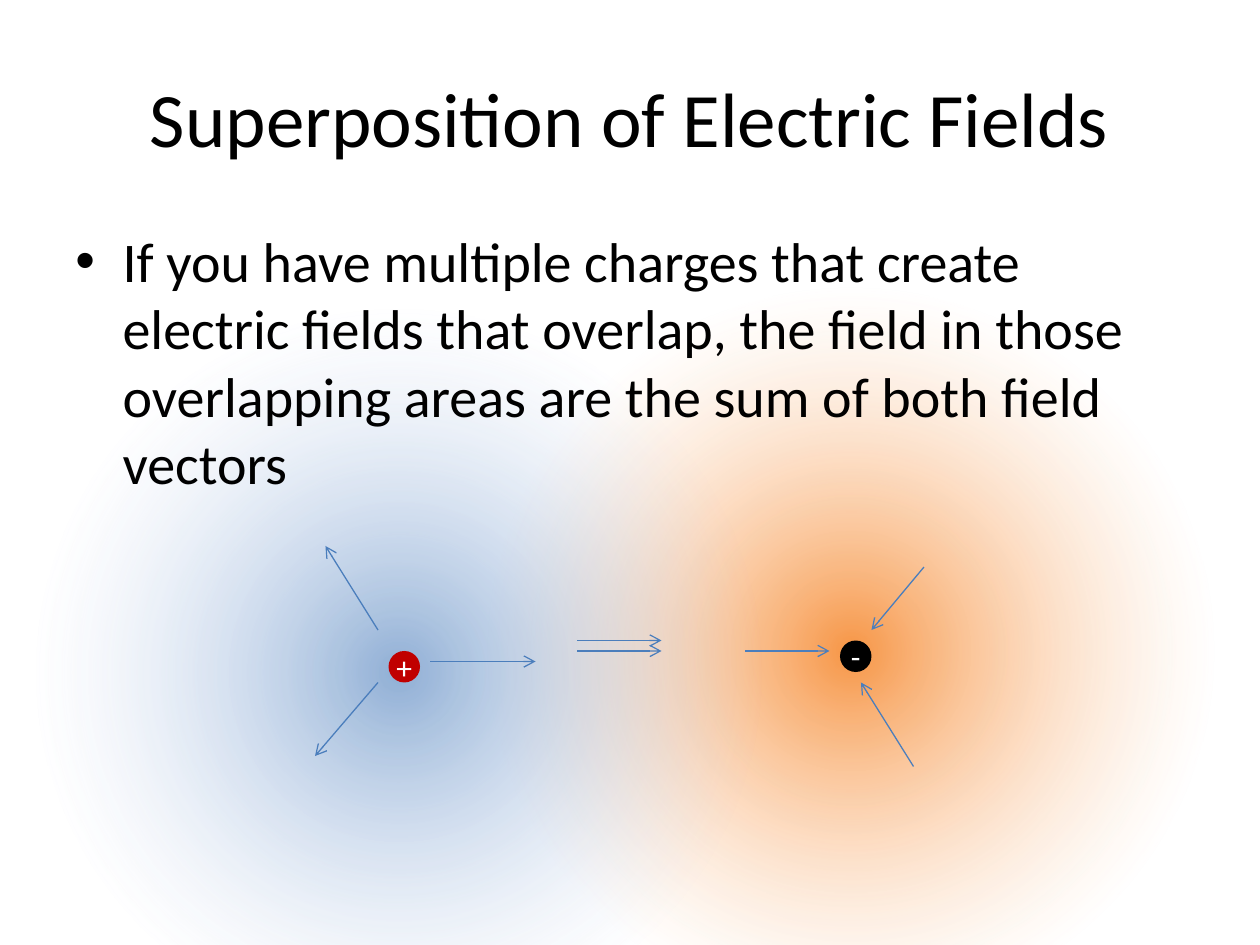
from lxml import etree
from pptx import Presentation
from pptx import util as u
from pptx.dml.color import RGBColor
from pptx.enum import shapes, text
from pptx.oxml import ns

WHITE = RGBColor(0xFF, 0xFF, 0xFF)
BLACK = RGBColor(0, 0, 0)
RED = RGBColor(0xC0, 0, 0)
ORANGE = RGBColor(0xF7, 0x96, 0x46)
PEACH = RGBColor(0xFC, 0xD5, 0xB5)
BLUE = RGBColor(0x4F, 0x81, 0xBD)
PALE_BLUE = RGBColor(0xC2, 0xD1, 0xED)
ARROW_BLUE = RGBColor(0x4B, 0x7E, 0xBC)

COLUMNS, ROWS = 120, 90
FIELD_SIZE, CHARGE_SIZE = 70, 3

FIELDS = [
    (46, 27, [(0, ORANGE, 100), (70, PEACH, 0)]),
    (3, 29, [(0, BLUE, 63), (70, PALE_BLUE, 0)]),
]
CHARGES = [(37, 62, "+", RED), (80, 61, "-", BLACK)]
ARROWS = [
    ((36, 60), (31, 52)),
    ((41, 63), (51, 63)),
    ((71, 62), (79, 62)),
    ((55, 62), (63, 62)),
    ((55, 61), (63, 61)),
    ((36, 65), (30, 72)),
    ((87, 73), (82, 65)),
    ((88, 54), (83, 60)),
]


def add_element(parent, tag, **values):
    return etree.SubElement(parent, ns.qn(tag), values)


def apply(target, values):
    for name, value in values.items():
        setattr(target, name, value)


class FieldPage:
    font = "Calibri"

    def __init__(self, deck):
        self.column = deck.slide_width / COLUMNS
        self.row = deck.slide_height / ROWS
        self.page = deck.slides.add_slide(deck.slide_layouts[6])

    def place(self, column, row):
        return round(column * self.column), round(row * self.row)

    def fill_text(self, shape, words, size, color, frame_format, para_format):
        frame = shape.text_frame
        apply(frame, {"word_wrap": True, **frame_format})
        para = frame.paragraphs[0]
        apply(para, para_format)
        span = para.add_run()
        span.text = words
        apply(span.font, {"name": self.font, "size": u.Pt(size)})
        span.font.color.rgb = color
        return para

    def text(self, column, row, width, height, words, size, frame_format, para_format):
        box = self.page.shapes.add_textbox(
            *self.place(column, row), *self.place(width, height))
        return self.fill_text(box, words, size, BLACK, frame_format, para_format)

    def bullet(self, *details):
        para = self.text(*details)
        settings = para._p.get_or_add_pPr()
        indent = u.Inches(0.375)
        settings.set("marL", str(indent))
        settings.set("indent", str(-indent))
        add_element(settings, "a:buFont", typeface="Arial")
        add_element(settings, "a:buChar", char="•")

    def circle(self, column, row, size):
        circle = self.page.shapes.add_shape(
            shapes.MSO_SHAPE.OVAL, *self.place(column, row), *self.place(size, size))
        circle.shadow.inherit = False
        circle.line.fill.background()
        return circle

    def field(self, column, row, stops):
        circle = self.circle(column, row, FIELD_SIZE)
        circle.fill.background()
        properties = circle._element.spPr
        empty_fill = properties.find(ns.qn("a:noFill"))
        gradient = etree.Element(ns.qn("a:gradFill"), rotWithShape="1")
        stop_list = add_element(gradient, "a:gsLst")
        for position, color, opacity in stops:
            stop = add_element(stop_list, "a:gs", pos=str(position * 1000))
            tint = add_element(stop, "a:srgbClr", val=str(color))
            add_element(tint, "a:alpha", val=str(opacity * 1000))
        center = add_element(gradient, "a:path", path="circle")
        add_element(center, "a:fillToRect", **dict.fromkeys("ltrb", "50000"))
        properties.replace(empty_fill, gradient)

    def charge(self, column, row, sign, color):
        circle = self.circle(column, row, CHARGE_SIZE)
        circle.fill.solid()
        circle.fill.fore_color.rgb = color
        margins = dict.fromkeys(
            ("margin_left", "margin_top", "margin_right", "margin_bottom"), 0)
        self.fill_text(circle, sign, 18, WHITE,
                       {"vertical_anchor": text.MSO_ANCHOR.MIDDLE, **margins},
                       {"alignment": text.PP_ALIGN.CENTER})

    def arrow(self, start, end):
        arrow = self.page.shapes.add_connector(
            shapes.MSO_CONNECTOR.STRAIGHT, *self.place(*start), *self.place(*end))
        arrow.line.width = u.Pt(0.75)
        arrow.line.color.rgb = ARROW_BLUE
        add_element(arrow.line._get_or_add_ln(), "a:tailEnd", type="arrow")
        add_element(arrow._element.spPr, "a:effectLst")


def main():
    deck = Presentation()
    apply(deck, {"slide_width": u.Inches(10), "slide_height": u.Inches(7.5)})
    page = FieldPage(deck)
    for field in FIELDS:
        page.field(*field)
    page.text(6, 3.6, 108, 15, "Superposition of Electric Fields", 44,
              {"vertical_anchor": text.MSO_ANCHOR.MIDDLE},
              {"alignment": text.PP_ALIGN.CENTER})
    page.bullet(6, 21, 108, 27,
                "If you have multiple charges that create electric fields that "
                "overlap, the field in those overlapping areas are the sum of "
                "both field vectors", 32,
                {"vertical_anchor": text.MSO_ANCHOR.TOP},
                {"space_before": u.Pt(6.4)})
    for charge in CHARGES:
        page.charge(*charge)
    for arrow in ARROWS:
        page.arrow(*arrow)
    deck.save("out.pptx")


if __name__ == "__main__":
    main()
